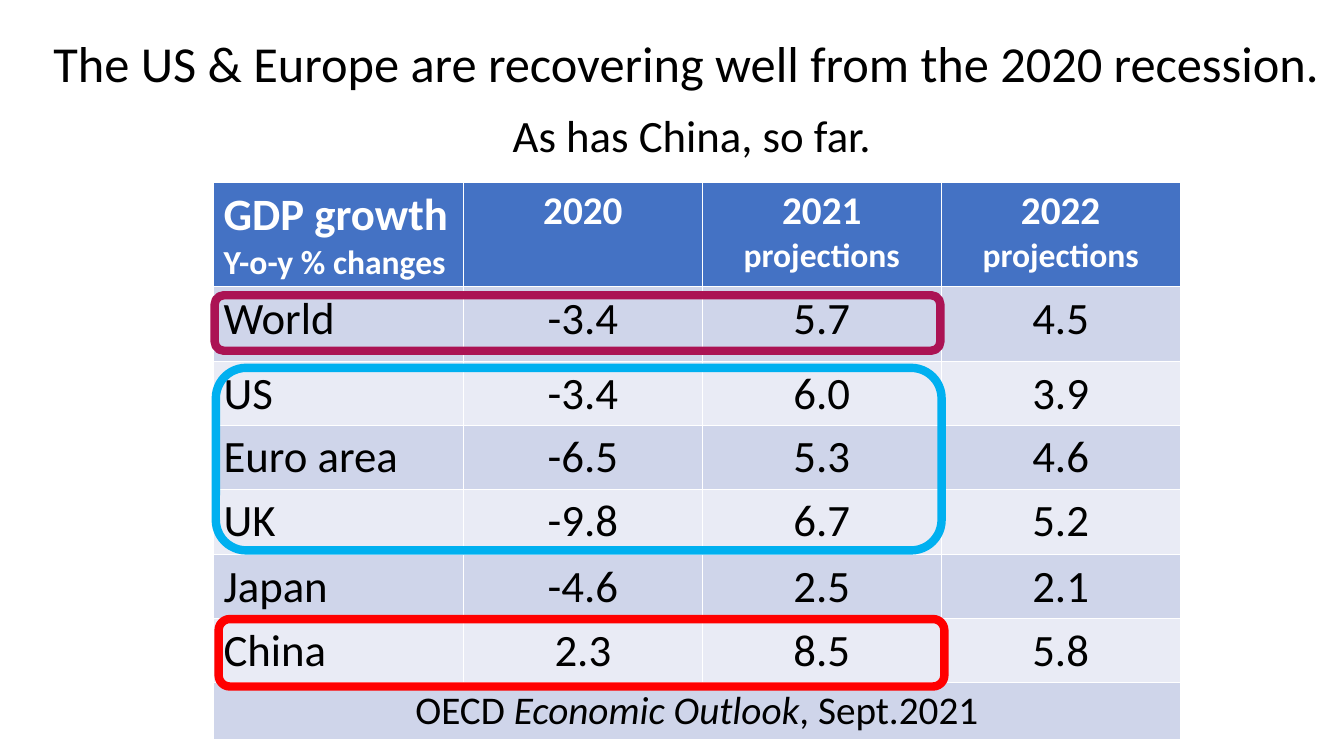
from dataclasses import dataclass

from pptx import Presentation
from pptx.dml.color import RGBColor
from pptx.enum.shapes import MSO_SHAPE
from pptx.enum.text import MSO_ANCHOR, MSO_AUTO_SIZE, PP_ALIGN
from pptx.util import Cm, Pt


@dataclass(frozen=True)
class Theme:
    font: str = "Calibri"
    text: str = "000000"
    header_text: str = "FFFFFF"
    header_fill: str = "4472C4"
    dark_band: str = "CFD5EA"
    light_band: str = "E9EBF5"
    world: str = "AB1354"
    west: str = "00B0F0"
    china: str = "FF0000"
    title_size: int = 36
    body_size: int = 32
    year_size: int = 28
    note_size: int = 24


theme = Theme()


def format_paragraph(paragraph, size, color=theme.text, bold=False, align=PP_ALIGN.LEFT):
    paragraph.alignment = align
    font = paragraph.font
    font.name, font.bold = theme.font, bold
    font.color.rgb = RGBColor.from_string(color)
    if size:
        font.size = Pt(size)


def fill_cell(cell, color):
    cell.fill.solid()
    cell.fill.fore_color.rgb = RGBColor.from_string(color)


presentation = Presentation()
presentation.slide_width, presentation.slide_height = Cm(33.87), Cm(19.05)
slide = presentation.slides.add_slide(presentation.slide_layouts[5])

# Growth table
growth = [
    ("World", "-3.4", "5.7", "4.5"),
    ("US", "-3.4", "6.0", "3.9"),
    ("Euro area", "-6.5", "5.3", "4.6"),
    ("UK", "-9.8", "6.7", "5.2"),
    ("Japan", "-4.6", "2.5", "2.1"),
    ("China", "2.3", "8.5", "5.8"),
]
row_heights = [2.29, 1.88, 1.52, 1.5, 1.65, 1.55, 1.57, 1.19]
column_widths = [6.3, 6.02, 6.02, 6.02]
table = slide.shapes.add_table(
    len(row_heights), len(column_widths), Cm(5.38), Cm(4.6),
    Cm(sum(column_widths)), Cm(sum(row_heights))).table
for row, height in zip(table.rows, row_heights):
    row.height = Cm(height)
for column, width in zip(table.columns, column_widths):
    column.width = Cm(width)

# Header row
measure = table.cell(0, 0)
measure.text = "GDP growth\nY-o-y % changes"
for paragraph, size in zip(measure.text_frame.paragraphs, (theme.body_size, theme.note_size)):
    format_paragraph(paragraph, size, theme.header_text, True)
fill_cell(measure, theme.header_fill)

years = [("2020", ""), ("2021", " projections"), ("2022", " projections")]
for column, (year, status) in enumerate(years, start=1):
    year_cell = table.cell(0, column)
    fill_cell(year_cell, theme.header_fill)
    paragraph = year_cell.text_frame.paragraphs[0]
    format_paragraph(paragraph, None, theme.header_text, True, PP_ALIGN.CENTER)
    for words, size in ((year, theme.year_size), (status, theme.note_size)):
        if words:
            run = paragraph.add_run()
            run.text, run.font.size = words, Pt(size)

# Regions, in alternating bands
for row, values in enumerate(growth, start=1):
    for column, value in enumerate(values):
        cell = table.cell(row, column)
        cell.text = value
        fill_cell(cell, theme.dark_band if row % 2 else theme.light_band)
        format_paragraph(cell.text_frame.paragraphs[0], theme.body_size,
                         align=PP_ALIGN.CENTER if column else PP_ALIGN.LEFT)

# Citation row
citation = table.cell(len(growth) + 1, 0)
citation.merge(table.cell(len(growth) + 1, len(column_widths) - 1))
fill_cell(citation, theme.dark_band)
paragraph = citation.text_frame.paragraphs[0]
format_paragraph(paragraph, theme.year_size, align=PP_ALIGN.CENTER)
for words, italic in (("OECD", False), (" Economic Outlook", True), (", Sept.2021", False)):
    run = paragraph.add_run()
    run.text, run.font.italic = words, italic

# Frames around the highlighted regions
frames = [
    (5.41, 7.44, 1.4, theme.world),
    (5.44, 9.27, 4.6, theme.west),
    (5.51, 15.6, 1.7, theme.china),
]
for left, top, height, color in frames:
    frame = slide.shapes.add_shape(
        MSO_SHAPE.ROUNDED_RECTANGLE, Cm(left), Cm(top), Cm(18.29), Cm(height))
    frame.shadow.inherit = False
    frame.fill.background()
    frame.line.color.rgb = RGBColor.from_string(color)
    frame.line.width = Pt(6)

# Title and subtitle
title = slide.shapes.title
title.left, title.top, title.width, title.height = Cm(1.09), Cm(0.69), Cm(32.72), Cm(1.8)
subtitle = slide.shapes.add_textbox(Cm(12.67), Cm(2.59), Cm(9.96), Cm(1.63))
headings = [
    (title, "The US & Europe are recovering well from the 2020 recession.", theme.title_size, False),
    (subtitle, "As has China, so far.", theme.body_size, True),
]
for heading, words, size, wraps in headings:
    frame_text = heading.text_frame
    frame_text.text = words
    frame_text.word_wrap = wraps
    frame_text.auto_size = MSO_AUTO_SIZE.SHAPE_TO_FIT_TEXT
    frame_text.vertical_anchor = MSO_ANCHOR.TOP
    format_paragraph(frame_text.paragraphs[0], size)

presentation.save("out.pptx")
